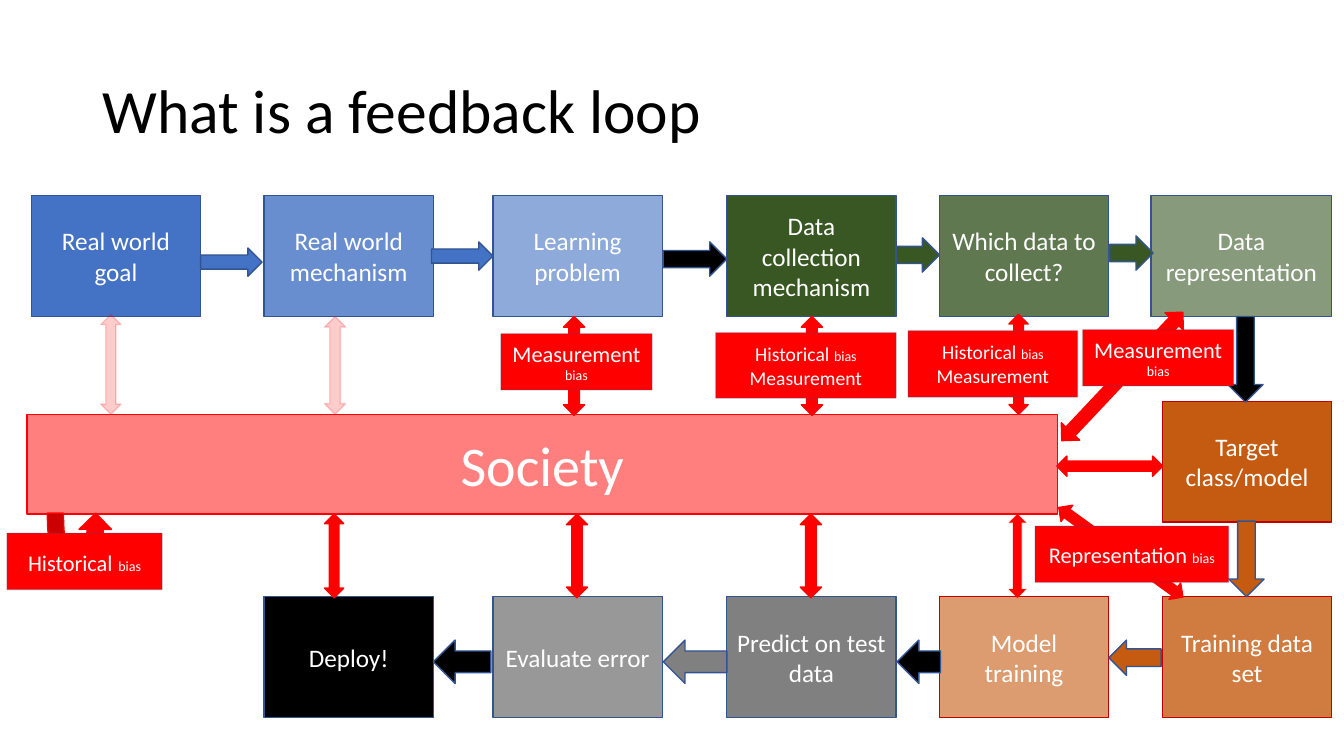
from lxml.etree import SubElement
from pptx import Presentation
from pptx.dml.color import RGBColor
from pptx.enum.shapes import MSO_SHAPE
from pptx.enum.text import MSO_ANCHOR, MSO_AUTO_SIZE, PP_ALIGN
from pptx.oxml.ns import qn
from pptx.util import Pt

# Content: colours
BLUE, GREEN, ORANGE, GREY = "4472C4", "385723", "C55A11", "808080"
BLACK, WHITE, RED = "000000", "FFFFFF", "FF0000"
BLUE_EDGE, RED_EDGE, LABEL_EDGE = "325491", "C00000", "2F528F"

# Content: steps as text, column, row, fill, opacity in percent, edge
TITLE = "What is a feedback loop"
STEPS = [
    ("Real world goal", 0, 0, BLUE, 100, BLUE_EDGE),
    ("Real world mechanism", 1, 0, BLUE, 80, BLUE_EDGE),
    ("Learning problem", 2, 0, BLUE, 60, BLUE_EDGE),
    ("Data collection mechanism", 3, 0, GREEN, 100, BLUE_EDGE),
    ("Which data to collect?", 4, 0, GREEN, 80, BLUE_EDGE),
    ("Data representation", 5, 0, GREEN, 60, BLUE_EDGE),
    ("Target class/model", 5, 1, ORANGE, 100, RED_EDGE),
    ("Training data set", 5, 2, ORANGE, 80, RED_EDGE),
    ("Model training", 4, 2, ORANGE, 60, RED_EDGE),
    ("Predict on test data", 3, 2, GREY, 100, BLUE_EDGE),
    ("Evaluate error", 2, 2, "7F7F7F", 80, BLUE_EDGE),
    ("Deploy!", 1, 2, BLACK, 100, BLUE_EDGE),
]
COLUMNS = [22.3, 188.6, 352.1, 519.1, 671, 830.2]
ROWS = [139.7, 286.6, 426.2]
STEP_WIDTH, STEP_HEIGHT = 121, 86.4
EXTRA_WIDTH = {"Data representation": 8}  # grows to the left

# Flow arrows: frame before rotation, rotation, fill
FLOW_ARROWS = [
    ((143.3, 177.1, 43.9, 20.2), 0, BLUE),
    ((308.2, 172.8, 43.9, 20.2), 0, BLUE),
    ((473.8, 172.8, 45.4, 24.5), 0, BLACK),
    ((640.1, 169.9, 31, 24.5), 0, GREEN),
    ((792.7, 168.5, 31, 24.5), 0, GREEN),
    ((859, 244.1, 61.2, 25.2), 90, BLACK),
    ((863.3, 386.6, 54, 25.2), 90, ORANGE),
    ((792, 457.2, 37.4, 25.2), 180, ORANGE),
    ((640.8, 457.2, 31, 31), 180, BLACK),
    ((473.8, 457.2, 45.4, 31), 180, GREY),
    ((309.6, 457.2, 41, 31), 180, BLACK),
]

# Society and its two-way arrows: frame, rotation, fill opacity, edge opacity
SOCIETY = (19.4, 295.9, 735.8, 71.3)
SOCIETY_ARROWS = [
    ((72, 224.6, 14.4, 71.3), 0, 20, 20),
    ((231.8, 226.1, 15.1, 69.8), 0, 20, 20),
    ((402.5, 226.1, 15.1, 70.6), 0, 100, 100),
    ((572.4, 226.1, 15.1, 70.6), 0, 100, 100),
    ((720.7, 224.6, 13.7, 71.3), 0, 100, 100),
    ((231.8, 367.2, 13.7, 59.8), 0, 100, 100),
    ((404.6, 367.2, 15.1, 59.8), 0, 100, 100),
    ((571.7, 367.2, 15.1, 59.8), 0, 100, 100),
    ((720.7, 367.2, 12.2, 59.8), 0, 100, 20),
    ((785.5, 295.2, 14.4, 75.6), 90, 100, 100),
    ((793.4, 339.8, 14.4, 109.4), 125.8, 100, 100),
    ((792.7, 205.9, 18, 126), 43.3, 100, 100),
]
HISTORY_ARROW = (31, 369.4, 51.8, 46.1)

# Bias labels: frame, then lines made of (text, size) spans
LABELS = [
    ((357.8, 238.3, 108, 40.3), [[("Measurement", 16)], [("bias", 10)]]),
    ((511.2, 237.6, 128.9, 46.8),
     [[("Historical ", 14), ("bias", 10)], [("Measurement", 14)]]),
    ((648.7, 236.2, 121, 47.5),
     [[("Historical ", 14), ("bias", 10)], [("Measurement", 14)]]),
    ((773.3, 235.4, 108, 40.3), [[("Measurement ", 16), ("bias", 10)]]),
    ((5, 380.9, 110.9, 40.3),
     [[("Historical", 16), (" ", 18), ("bias", 10)]]),
    ((739.4, 375.8, 138.2, 40.3), [[("Representation ", 16), ("bias", 10)]]),
]


def paint(color_format, color, opacity=100):
    color_format.rgb = RGBColor.from_string(color)
    if opacity < 100:
        node = color_format._xFill.find(qn("a:srgbClr"))
        SubElement(node, qn("a:alpha"), val=str(opacity * 1000))


def add_span(para, text, size=18, color=WHITE):
    span = para.add_run()
    span.text = text
    span.font.name, span.font.size = "Calibri", Pt(size)
    paint(span.font.color, color)


def add_block(kind, frame, fill, edge, lines=(), rotation=0,
              opacity=100, edge_opacity=100):
    block = page.shapes.add_shape(kind, *map(Pt, frame))
    block.shadow.inherit = False
    block.rotation = rotation
    block.fill.solid()
    paint(block.fill.fore_color, fill, opacity)
    block.line.width = Pt(1)
    block.line.fill.solid()
    paint(block.line.fill.fore_color, edge, edge_opacity)
    text = block.text_frame
    text.word_wrap, text.vertical_anchor = True, MSO_ANCHOR.MIDDLE
    for index, line in enumerate(lines):
        para = text.add_paragraph() if index else text.paragraphs[0]
        para.alignment = PP_ALIGN.CENTER
        for words, size in line:
            add_span(para, words, size=size)


deck = Presentation()
deck.slide_width, deck.slide_height = Pt(960), Pt(540)
page = deck.slides.add_slide(deck.slide_layouts[5])

# Title
title = page.shapes.title
title.left, title.top, title.width, title.height = map(Pt, (66, 28.8, 828, 104.4))
title.text_frame.auto_size = MSO_AUTO_SIZE.NONE
title.text_frame.vertical_anchor = MSO_ANCHOR.MIDDLE
heading = title.text_frame.paragraphs[0]
heading.alignment, heading.line_spacing = PP_ALIGN.LEFT, 0.9
add_span(heading, TITLE, size=44, color=BLACK)

# Steps and the flow between them
for name, column, row, fill, opacity, edge in STEPS:
    extra = EXTRA_WIDTH.get(name, 0)
    frame = (COLUMNS[column] - extra, ROWS[row], STEP_WIDTH + extra, STEP_HEIGHT)
    add_block(MSO_SHAPE.RECTANGLE, frame, fill, edge, [[(name, 18)]], opacity=opacity)
for frame, rotation, fill in FLOW_ARROWS:
    add_block(MSO_SHAPE.RIGHT_ARROW, frame, fill, BLUE_EDGE, rotation=rotation)

# Society and its influence on each step
add_block(MSO_SHAPE.RECTANGLE, SOCIETY, RED, RED, [[("Society", 40)]], opacity=50)
for frame, rotation, opacity, edge_opacity in SOCIETY_ARROWS:
    add_block(MSO_SHAPE.UP_DOWN_ARROW, frame, RED, RED, rotation=rotation,
              opacity=opacity, edge_opacity=edge_opacity)
add_block(MSO_SHAPE.CURVED_RIGHT_ARROW, HISTORY_ARROW, RED, RED, rotation=270)

# Bias labels
for frame, lines in LABELS:
    add_block(MSO_SHAPE.RECTANGLE, frame, RED, LABEL_EDGE, lines, edge_opacity=20)

deck.save("out.pptx")
